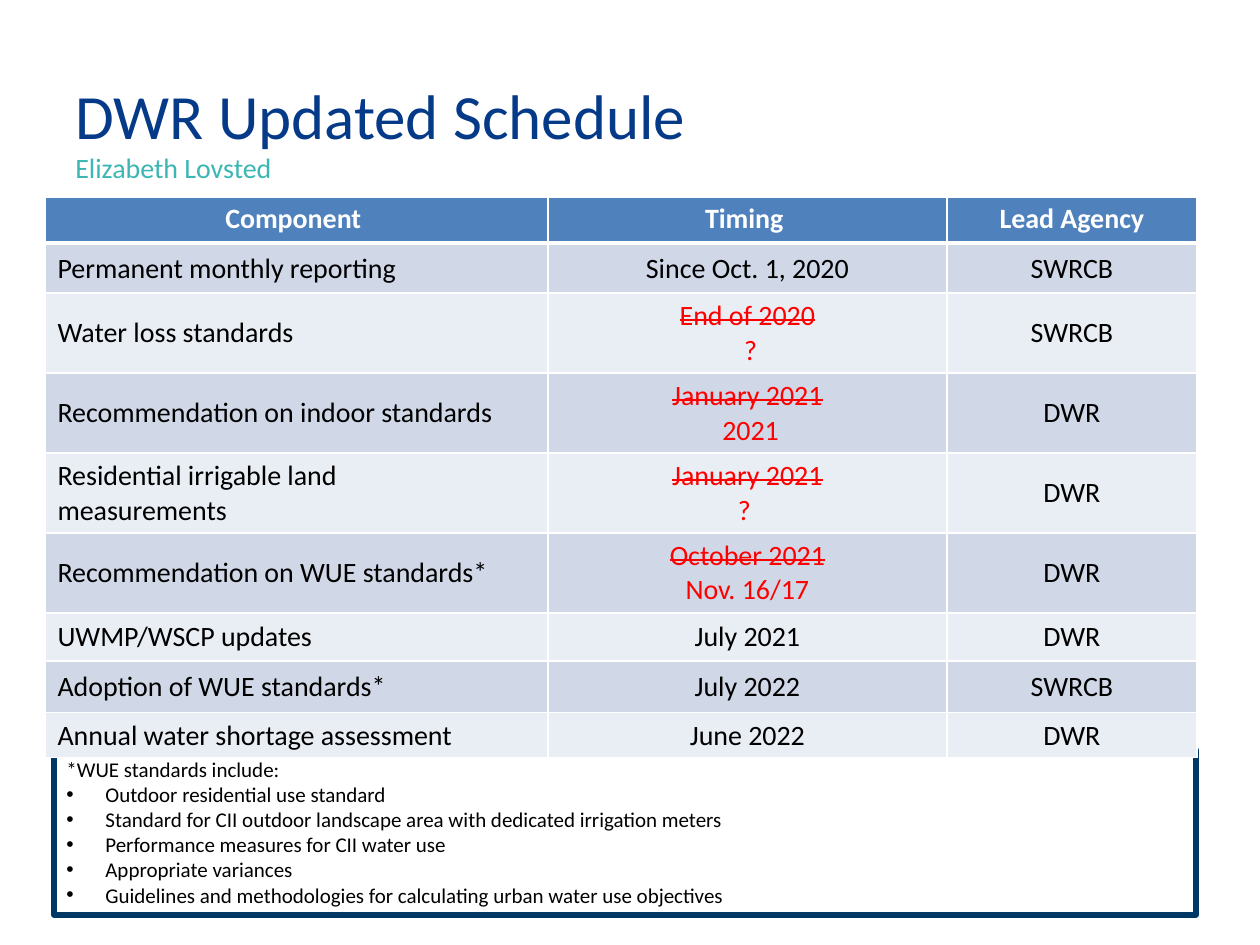
import pptx
import pptx.util
import pptx.dml.color
import pptx.enum.shapes
import pptx.enum.text
import pptx.oxml.ns
import lxml.etree

HUES = {
    "navy": "053A88", "teal": "3BB6B3", "edge": "003865", "head": "4F81BD",
    "dark": "D0D8E8", "light": "E9EDF4", "white": "FFFFFF", "black": "000000",
    "red": "FF0000",
}
ALIGN = pptx.enum.text.PP_ALIGN
ANCHOR = pptx.enum.text.MSO_ANCHOR
qn = pptx.oxml.ns.qn


def px(n):
    return round(n * 914400 / 126)


def hue(name):
    return pptx.dml.color.RGBColor.from_string(HUES[name])


class Deck:
    face = "Calibri"

    def __init__(self, wide, high):
        self.file = pptx.Presentation()
        self.file.slide_width = px(wide)
        self.file.slide_height = px(high)
        self.slide = self.file.slides.add_slide(self.file.slide_layouts[6])

    def style(self, para, size, color, bold=False, strike=False):
        for run in para.runs:
            run.font.name = self.face
            run.font.size = pptx.util.Pt(size)
            run.font.bold = bold
            run.font.color.rgb = hue(color)
            if strike:
                run.font._element.set("strike", "sngStrike")

    def text(self, box, words, size, color, anchor=ANCHOR.TOP):
        frame = self.slide.shapes.add_textbox(*map(px, box)).text_frame
        frame.word_wrap = True
        frame.vertical_anchor = anchor
        frame.text = words
        self.style(frame.paragraphs[0], size, color)
        return frame.paragraphs[0]

    def notes(self, box, lead, items):
        kind = pptx.enum.shapes.MSO_SHAPE.RECTANGLE
        shape = self.slide.shapes.add_shape(kind, *map(px, box))
        shape.shadow.inherit = False
        shape.fill.solid()
        shape.fill.fore_color.rgb = hue("white")
        shape.line.color.rgb = hue("edge")
        shape.line.width = pptx.util.Pt(3)
        frame = shape.text_frame
        frame.word_wrap = True
        frame.vertical_anchor = ANCHOR.TOP
        frame.text = "\n".join([lead, *items])
        for n, para in enumerate(frame.paragraphs):
            para.alignment = ALIGN.LEFT
            if n:
                self.bullet(para)
            self.style(para, 12, "black")

    def bullet(self, para):
        prop = para._p.get_or_add_pPr()
        prop.set("marL", str(px(39)))
        prop.set("indent", str(-px(39)))
        font = lxml.etree.SubElement(prop, qn("a:buFont"))
        font.set("typeface", "Arial")
        lxml.etree.SubElement(prop, qn("a:buChar")).set("char", "•")

    def border(self, cell, row):
        prop = cell._tc.get_or_add_tcPr()
        thick = {(0, "B"), (1, "T")}
        for side in "LRTB":
            line = lxml.etree.SubElement(prop, qn("a:ln" + side))
            width = pptx.util.Pt(3 if (row, side) in thick else 1)
            line.set("w", str(width))
            fill = lxml.etree.SubElement(line, qn("a:solidFill"))
            tint = lxml.etree.SubElement(fill, qn("a:srgbClr"))
            tint.set("val", HUES["white"])

    def table(self, left, top, cols, rows, data):
        box = map(px, (left, top, sum(cols), sum(rows)))
        grid = self.slide.shapes.add_table(len(rows), len(cols), *box).table
        for col, wide in zip(grid.columns, cols):
            col.width = px(wide)
        for row, high in zip(grid.rows, rows):
            row.height = px(high)
        for r, line in enumerate(data):
            for c, words in enumerate(line):
                self.cell(grid.cell(r, c), r, c, words)

    def cell(self, cell, row, col, words):
        head = row == 0
        self.border(cell, row)
        cell.fill.solid()
        shade = "head" if head else "dark" if row % 2 else "light"
        cell.fill.fore_color.rgb = hue(shade)
        cell.vertical_anchor = ANCHOR.TOP if head else ANCHOR.MIDDLE
        cell.margin_top = px(5)
        cell.margin_bottom = px(4)
        cell.text_frame.text = words
        paras = cell.text_frame.paragraphs
        moved = len(paras) > 1
        color = "white" if head else "red" if moved else "black"
        for n, para in enumerate(paras):
            para.alignment = ALIGN.CENTER if head or col else ALIGN.LEFT
            self.style(para, 16, color, head, moved and n == 0)


def main():
    deck = Deck(1260, 945)
    deck.notes((54, 750, 1142, 165), "*WUE standards include:", [
        "Outdoor residential use standard",
        "Standard for CII outdoor landscape area with dedicated irrigation meters",
        "Performance measures for CII water use",
        "Appropriate variances",
        "Guidelines and methodologies for calculating urban water use objectives",
    ])
    deck.table(45, 197, (503, 399, 250), (46, 50, 80, 80, 80, 80, 48, 52, 45), [
        ("Component ", "Timing ", "Lead Agency"),
        ("Permanent monthly reporting", "Since Oct. 1, 2020", "SWRCB"),
        ("Water loss standards", "End of 2020\n ?", "SWRCB"),
        ("Recommendation on indoor standards", "January 2021\n 2021", "DWR"),
        ("Residential irrigable land \vmeasurements", "January 2021\n? ", "DWR"),
        ("Recommendation on WUE standards*", "October 2021\nNov. 16/17", "DWR"),
        ("UWMP/WSCP updates", "July 2021", "DWR"),
        ("Adoption of WUE standards*", "July 2022", "SWRCB"),
        ("Annual water shortage assessment", "June 2022", "DWR"),
    ])
    deck.text((63, 144, 1134, 44), "Elizabeth Lovsted", 16, "teal")
    title = deck.text((63, 36, 1134, 122), "DWR Updated Schedule", 36, "navy",
                      ANCHOR.BOTTOM)
    title.line_spacing = pptx.util.Pt(36)
    deck.file.save("out.pptx")


if __name__ == "__main__":
    main()
